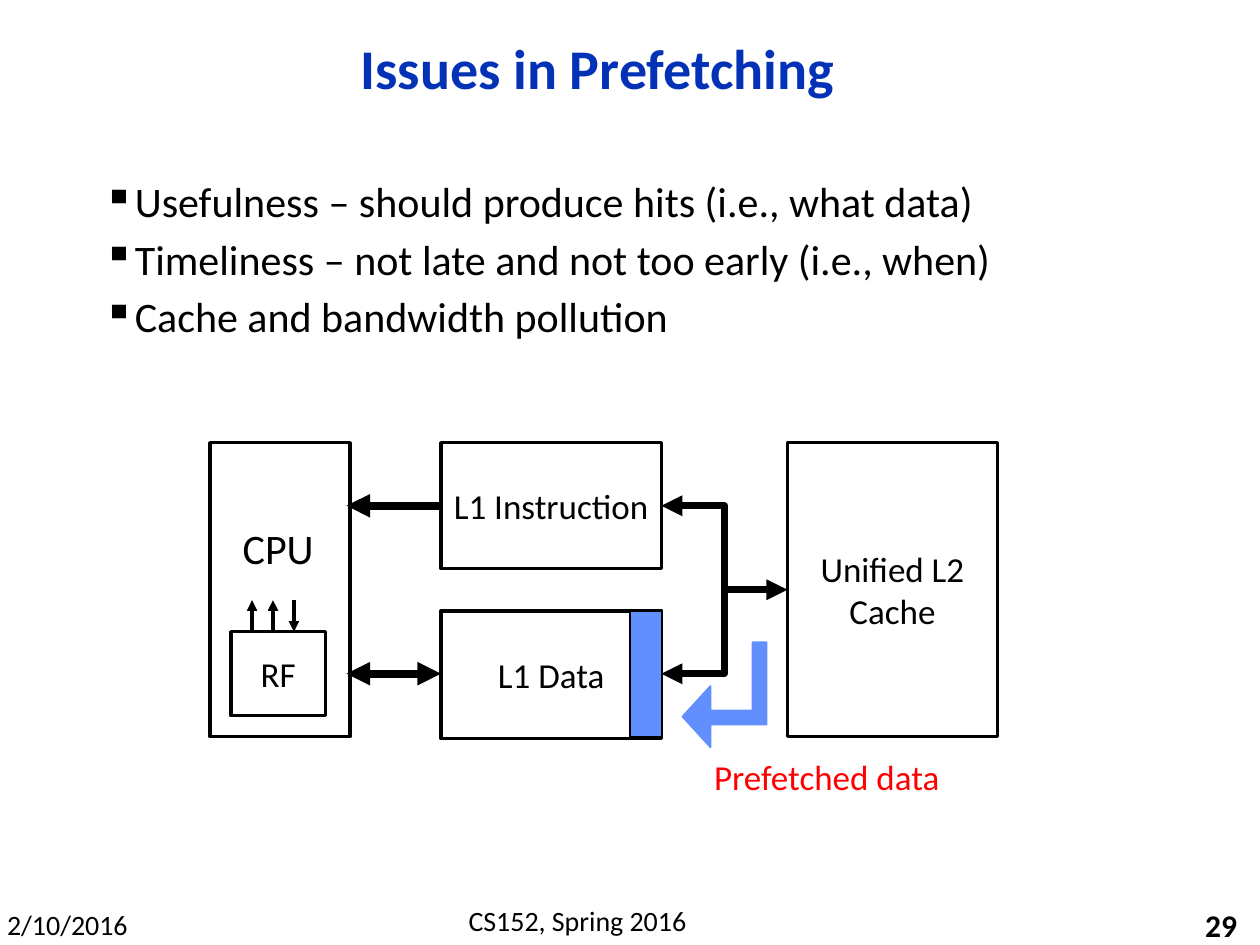
"""Build a slide on prefetching issues with a cache hierarchy diagram."""
from lxml import etree
from pptx import Presentation
from pptx import util as u
from pptx.dml.color import RGBColor
from pptx.enum import shapes, text
from pptx.oxml.ns import qn

Pt = u.Pt
BLACK = RGBColor(0x00, 0x00, 0x00)
WHITE = RGBColor(0xFF, 0xFF, 0xFF)
TITLE_BLUE = RGBColor(0x03, 0x32, 0xB7)
PREFETCH_BLUE = RGBColor(0x61, 0x8F, 0xFD)
RED = RGBColor(0xFF, 0x00, 0x00)

LEFT, CENTER, RIGHT = (text.PP_ALIGN.LEFT, text.PP_ALIGN.CENTER,
                       text.PP_ALIGN.RIGHT)
TOP, MIDDLE = text.MSO_ANCHOR.TOP, text.MSO_ANCHOR.MIDDLE
ISSUES = (
    "Usefulness – should produce hits (i.e., what data)",
    "Timeliness – not late and not too early (i.e., when)",
    "Cache and bandwidth pollution",
)


def write_text(shape, *lines, size=20, color=BLACK, bold=False, align=CENTER,
               anchor=TOP, wrap=True, line_spacing=None, space_after=0,
               bullet=None):
    frame = shape.text_frame
    frame.word_wrap = wrap
    frame.vertical_anchor = anchor
    for index, line in enumerate(lines):
        paragraph = frame.add_paragraph() if index else frame.paragraphs[0]
        paragraph.alignment = align
        paragraph.line_spacing = line_spacing
        paragraph.space_after = Pt(space_after)
        run = paragraph.add_run()
        run.text = line
        run.font.name = "Calibri"
        run.font.size = Pt(size)
        run.font.bold = bold
        run.font.color.rgb = color
        if bullet:
            add_bullet(paragraph, bullet)


def add_bullet(paragraph, character, indent=18):
    properties = paragraph._p.get_or_add_pPr()
    properties.set("marL", str(Pt(indent)))
    properties.set("indent", str(-Pt(indent)))
    etree.SubElement(properties, qn("a:buChar"), char=character)


def add_label(slide, box, *lines, **text_format):
    label = slide.shapes.add_textbox(*map(Pt, box))
    write_text(label, *lines, **text_format)


def style_outline(shape, width, color=BLACK, heads=()):
    shape.line.color.rgb = color
    shape.line.width = Pt(width)
    line = shape.line._get_or_add_ln()
    for end in heads:
        etree.SubElement(line, qn(f"a:{end}"), type="triangle")


def add_block(slide, box, label=None, fill=WHITE, line_width=2, wrap=False):
    block = slide.shapes.add_shape(shapes.MSO_SHAPE.RECTANGLE, *map(Pt, box))
    block.shadow.inherit = False
    block.fill.solid()
    block.fill.fore_color.rgb = fill
    style_outline(block, line_width)
    if label:
        write_text(block, label, anchor=MIDDLE, wrap=wrap)


def add_arrow(slide, start, end, width, heads=("tailEnd",)):
    arrow = slide.shapes.add_connector(
        shapes.MSO_CONNECTOR.STRAIGHT, *map(Pt, (*start, *end)))
    style_outline(arrow, width, heads=heads)
    etree.SubElement(arrow._element.spPr, qn("a:effectLst"))


def add_path(slide, points, width, color=BLACK, heads=(), filled=False):
    start, *rest = [(Pt(x), Pt(y)) for x, y in points]
    builder = slide.shapes.build_freeform(*start)
    builder.add_line_segments(rest, close=filled)
    path = builder.convert_to_shape()
    path.shadow.inherit = False
    if filled:
        path.fill.solid()
        path.fill.fore_color.rgb = color
    else:
        path.fill.background()
    style_outline(path, width, color, heads)


def add_texts(slide):
    add_label(slide, (-3.5, 515, 84, 27), "2/10/2016", size=16, wrap=False)
    add_label(slide, (210, 513, 240, 27), "CS152, Spring 2016", size=16)
    add_label(slide, (564, 517, 150, 23), "29", size=18, bold=True,
              align=RIGHT, anchor=MIDDLE)
    add_label(slide, (54, 12, 575, 58), "Issues in Prefetching", size=32,
              color=TITLE_BLUE, bold=True, anchor=MIDDLE, line_spacing=0.9)
    add_label(slide, (52, 100, 612, 126), *ISSUES, size=24, align=LEFT,
              line_spacing=0.9, space_after=7, bullet="▪")


def add_caches(slide):
    top, instruction_y, data_y = 253, 289, 385
    middle_y = (instruction_y + data_y) / 2
    l1_left, l1_right, bus_x, l2_left = 252, 378, 414, 450
    both_ends = ("headEnd", "tailEnd")

    add_block(slide, (120, top, 80, 168))
    add_block(slide, (l1_left, 349, 126, 73), "L1 Data")
    add_arrow(slide, (l1_left, instruction_y), (198, instruction_y), 4.5)
    add_arrow(slide, (l1_left, data_y), (198, data_y), 4.5, both_ends)
    add_block(slide, (l1_left, top, 126, 72), "L1 Instruction")
    add_block(slide, (l2_left, top, 120, 168), "Unified L2 Cache", wrap=True)
    add_path(slide, [(l1_right, instruction_y), (bus_x, instruction_y),
                     (bus_x, middle_y), (l2_left, middle_y)], 4,
             heads=both_ends)
    add_path(slide, [(bus_x, middle_y), (bus_x, data_y), (l1_right, data_y)],
             4, heads=("tailEnd",))


def add_register_file(slide):
    bottom, top = 361, 343
    add_block(slide, (132, bottom, 54, 48), "RF")
    for x, start, end in ((144, bottom, top), (156, bottom, top),
                          (168, top, bottom)):
        add_arrow(slide, (x, start), (x, end), 2)
    add_label(slide, (120, 295, 78, 36), "CPU", size=24)


def add_prefetch(slide):
    add_path(slide, [(390, 409.5), (406, 392), (406, 406), (430, 406),
                     (430, 367), (438, 367), (438, 414), (406, 414),
                     (406, 427)], 1, PREFETCH_BLUE, filled=True)
    add_label(slide, (401, 428, 149, 32), "Prefetched data", color=RED,
              align=LEFT, wrap=False)
    add_block(slide, (360, 349, 18, 72), fill=PREFETCH_BLUE, line_width=1)


def main():
    presentation = Presentation()
    presentation.slide_width, presentation.slide_height = Pt(720), Pt(540)
    slide = presentation.slides.add_slide(presentation.slide_layouts[6])
    add_texts(slide)
    add_caches(slide)
    add_register_file(slide)
    add_prefetch(slide)
    presentation.save("out.pptx")


if __name__ == "__main__":
    main()
